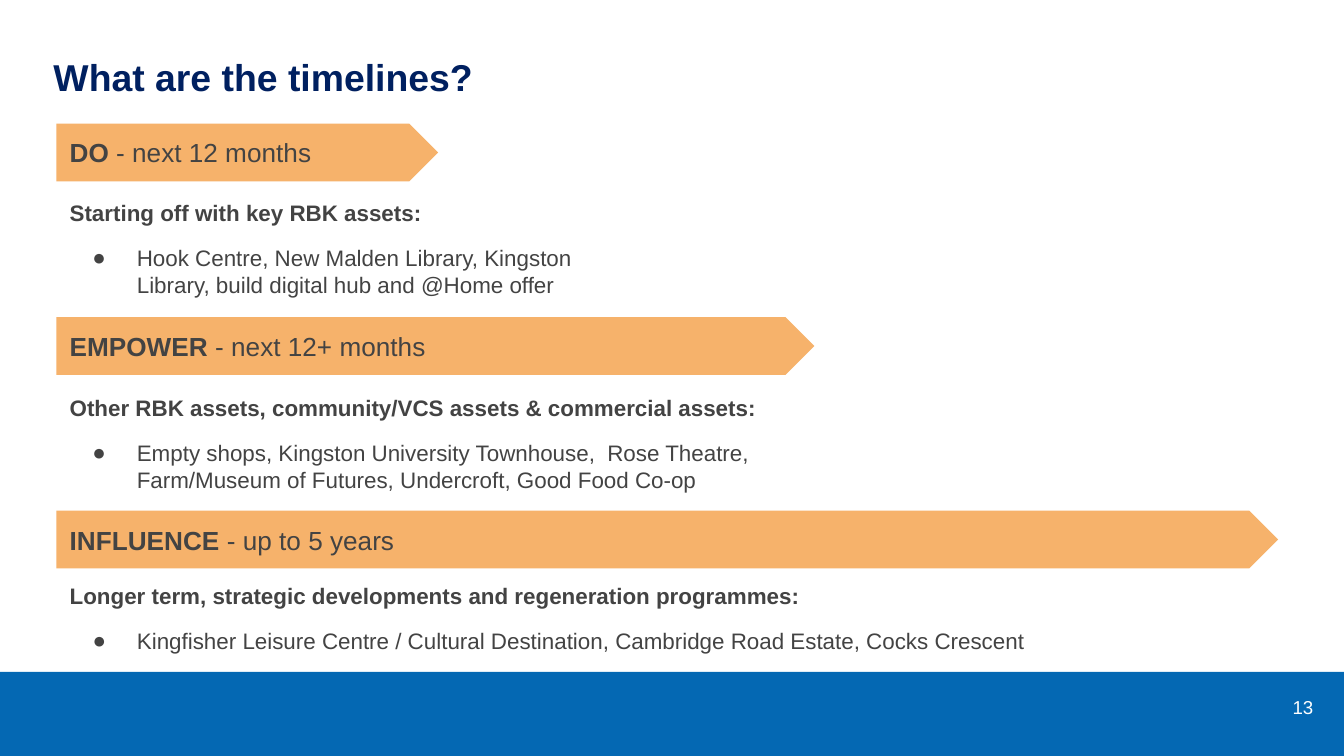
import lxml.etree
import pptx
import pptx.dml.color
import pptx.enum.shapes
import pptx.enum.text
import pptx.oxml.ns
import pptx.util

Inches = pptx.util.Inches
MIDDLE = pptx.enum.text.MSO_ANCHOR.MIDDLE
TOP = pptx.enum.text.MSO_ANCHOR.TOP
LEFT = pptx.enum.text.PP_ALIGN.LEFT
RIGHT = pptx.enum.text.PP_ALIGN.RIGHT
SHAPES = pptx.enum.shapes.MSO_SHAPE

SLIDE_WIDTH = 10
SLIDE_HEIGHT = SLIDE_WIDTH * 9 / 16
FOOTER_TOP = 5
GREY = "434343"
STAGE_LEFT = 0.42
ARROW_HEIGHT = 0.43
STAGE_TOP = 0.92
STAGE_PITCH = 1.44

STAGES = [
    {
        "name": "DO", "period": " - next 12 months", "arrow_width": 2.84,
        "heading": "Starting off with key RBK assets:",
        "detail": "Hook Centre, New Malden Library, Kingston Library, "
                  "build digital hub and @Home offer",
        "detail_box": (0.46, 4.14, 0.95),
    },
    {
        "name": "EMPOWER", "period": " - next 12+ months", "arrow_width": 5.64,
        "heading": "Other RBK assets, community/VCS assets & commercial assets:",
        "detail": "Empty shops, Kingston University Townhouse,  Rose Theatre, "
                  "Farm/Museum of Futures, Undercroft, Good Food Co-op",
        "detail_box": (0.47, 5.64, 0.95),
    },
    {
        "name": "INFLUENCE", "period": " - up to 5 years", "arrow_width": 9.09,
        "heading": "Longer term, strategic developments and regeneration programmes:",
        "detail": "Kingfisher Leisure Centre / Cultural Destination, "
                  "Cambridge Road Estate, Cocks Crescent",
        "detail_box": (0.43, 8.39, 0.75),
    },
]


def colour(hex_string):
    """Return the RGB colour for a hex string."""
    return pptx.dml.color.RGBColor.from_string(hex_string)


def add_run(paragraph, text, size, hex_string, bold=False):
    """Add one Arial run to a paragraph."""
    run = paragraph.add_run()
    run.text = text
    run.font.name = "Arial"
    run.font.size = pptx.util.Pt(size)
    run.font.bold = bold
    run.font.color.rgb = colour(hex_string)


def add_block(slide, preset, box, fill):
    """Add a filled preset shape without line or shadow."""
    shape = slide.shapes.add_shape(preset, *map(Inches, box))
    shape.shadow.inherit = False
    shape.fill.solid()
    shape.fill.fore_color.rgb = colour(fill)
    shape.line.fill.background()
    return shape


def set_frame(shape, anchor=TOP, align=LEFT):
    """Set margins, wrapping and anchor, and return the text frame."""
    frame = shape.text_frame
    frame.word_wrap = True
    frame.vertical_anchor = anchor
    frame.margin_left = frame.margin_right = Inches(0.1)
    frame.margin_top = frame.margin_bottom = Inches(0.1)
    frame.paragraphs[0].alignment = align
    return frame


def add_text_box(slide, box, anchor=TOP, align=LEFT):
    """Add a text box and return its text frame."""
    return set_frame(slide.shapes.add_textbox(*map(Inches, box)), anchor, align)


def set_bullet(paragraph, hex_string):
    """Give a paragraph a hanging round bullet."""
    properties = paragraph._p.get_or_add_pPr()
    properties.set("marL", str(Inches(0.5)))
    properties.set("indent", str(Inches(-0.33)))
    qn = pptx.oxml.ns.qn
    bullet_colour = lxml.etree.SubElement(properties, qn("a:buClr"))
    lxml.etree.SubElement(bullet_colour, qn("a:srgbClr"), val=hex_string)
    lxml.etree.SubElement(properties, qn("a:buFont"), typeface="Arial")
    lxml.etree.SubElement(properties, qn("a:buChar"), char="●")


def add_footer(slide, left, top, width, height, number):
    """Draw the footer band with the slide number."""
    add_block(slide, SHAPES.RECTANGLE, (left, top, width, height), "0468B3")
    number_box = (left + width - 0.73, top + 0.05, 0.6, 0.42)
    frame = add_text_box(slide, number_box, MIDDLE, RIGHT)
    add_run(frame.paragraphs[0], number, 10, "FFFFFF")


def add_title(slide, left, top, width, height, text):
    """Write the slide title."""
    frame = add_text_box(slide, (left, top, width, height))
    add_run(frame.paragraphs[0], text, 20, "002060", bold=True)


def add_stage(slide, left, top, stage):
    """Draw a timeline arrow with its heading and bullet below."""
    arrow_box = (left, top, stage["arrow_width"], ARROW_HEIGHT)
    arrow = add_block(slide, SHAPES.PENTAGON, arrow_box, "F6B26B")
    arrow.adjustments[0] = 0.5
    label = set_frame(arrow, MIDDLE).paragraphs[0]
    add_run(label, stage["name"], 14, GREY, bold=True)
    add_run(label, stage["period"], 14, GREY)

    offset, width, height = stage["detail_box"]
    frame = add_text_box(slide, (left, top + offset, width, height))
    add_run(frame.paragraphs[0], stage["heading"], 12, GREY, bold=True)
    detail = frame.add_paragraph()
    detail.space_before = pptx.util.Pt(10)
    set_bullet(detail, GREY)
    add_run(detail, stage["detail"], 12, GREY)


def main():
    """Build and save the timelines slide."""
    presentation = pptx.Presentation()
    presentation.slide_width = Inches(SLIDE_WIDTH)
    presentation.slide_height = Inches(SLIDE_HEIGHT)
    slide = presentation.slides.add_slide(presentation.slide_layouts[6])
    footer_height = SLIDE_HEIGHT - FOOTER_TOP
    add_footer(slide, 0, FOOTER_TOP, SLIDE_WIDTH, footer_height, "13")
    add_title(slide, 0.3, 0.3, 9.4, 0.59, "What are the timelines?")
    for index, stage in enumerate(STAGES):
        add_stage(slide, STAGE_LEFT, STAGE_TOP + index * STAGE_PITCH, stage)
    presentation.save("out.pptx")


if __name__ == "__main__":
    main()
